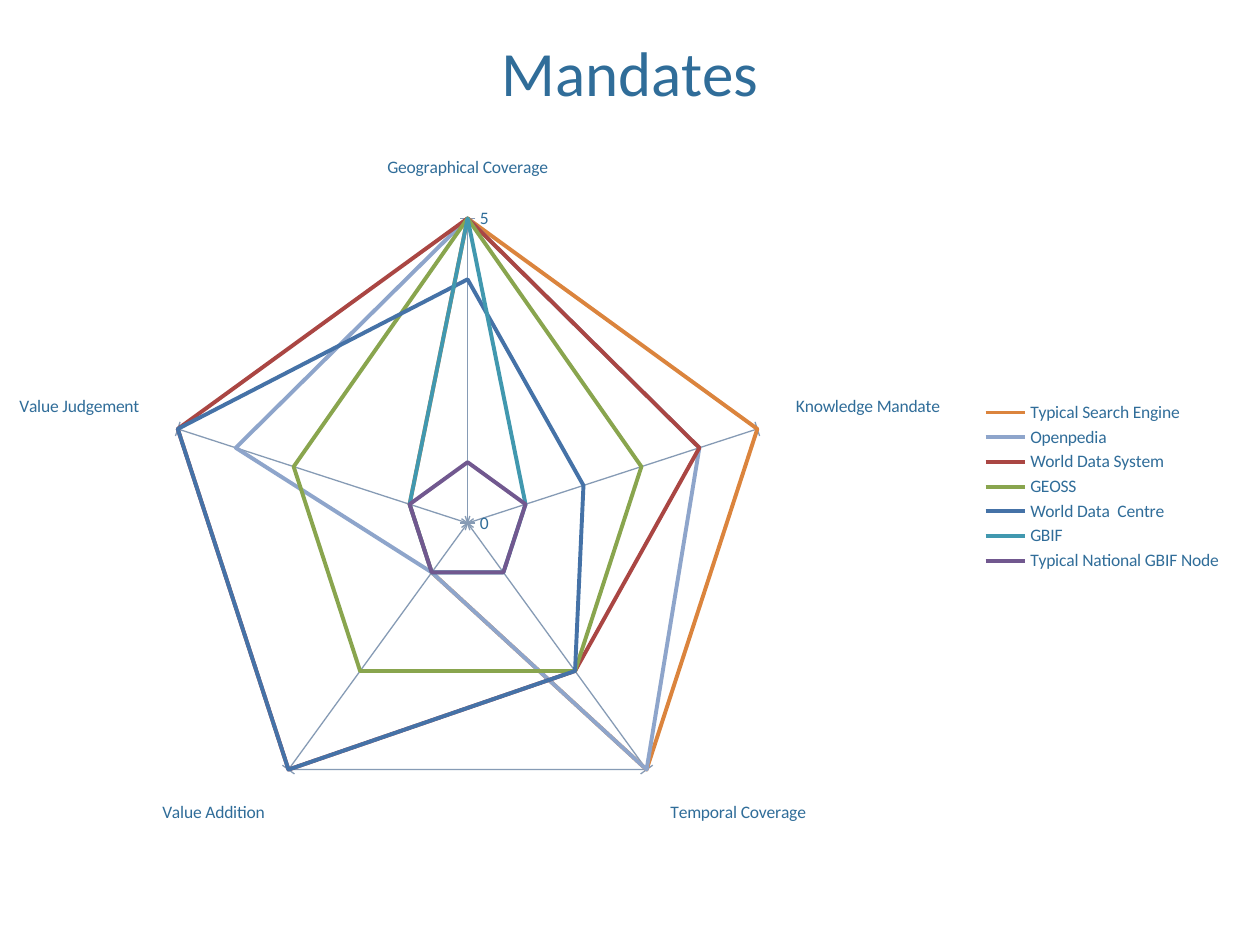
from dataclasses import dataclass

from lxml import etree
from pptx import Presentation
from pptx.chart.data import CategoryChartData
from pptx.dml.color import RGBColor
from pptx.enum import chart as ch, text
from pptx.oxml.ns import qn
from pptx.util import Inches, Pt

TEXT = RGBColor(0x30, 0x6D, 0x99)
GRID = RGBColor(0x86, 0x9B, 0xB5)
FONT = "Calibri"
CATEGORIES = ["Geographical Coverage", "Knowledge Mandate", "Temporal Coverage",
              "Value Addition", "Value Judgement"]


@dataclass
class Provider:
    name: str
    scores: tuple[int, ...]
    color: RGBColor


PROVIDERS = [
    Provider("Typical Search Engine", (5, 5, 5, 1, 1), RGBColor(0xDB, 0x84, 0x3D)),
    Provider("Openpedia", (5, 4, 5, 1, 4), RGBColor(0x8E, 0xA5, 0xCB)),
    Provider("World Data System", (5, 4, 3, 5, 5), RGBColor(0xAA, 0x46, 0x43)),
    Provider("GEOSS", (5, 3, 3, 3, 3), RGBColor(0x89, 0xA5, 0x4E)),
    Provider("World Data  Centre", (4, 2, 3, 5, 5), RGBColor(0x45, 0x72, 0xA7)),
    Provider("GBIF", (5, 1, 1, 1, 1), RGBColor(0x41, 0x98, 0xAF)),
    Provider("Typical National GBIF Node", (1, 1, 1, 1, 1), RGBColor(0x71, 0x58, 0x8F)),
]


@dataclass
class Box:
    """Left, top, width and height as shares of the enclosing area."""
    x: float
    y: float
    w: float
    h: float

    def on_slide(self, prs) -> tuple[int, ...]:
        width, height = prs.slide_width, prs.slide_height
        return (int(self.x * width), int(self.y * height),
                int(self.w * width), int(self.h * height))


TITLE_BOX = Box(0.05, 0.02, 0.9, 0.11)
CHART_BOX = Box(-0.01, 0.085, 0.99, 0.86)
PLOT_BOX = Box(0.14, 0.17, 0.49, 0.75)


def set_title(prs, slide, title: str) -> None:
    sp = slide.shapes.title
    sp.left, sp.top, sp.width, sp.height = TITLE_BOX.on_slide(prs)
    tf = sp.text_frame
    tf.vertical_anchor = text.MSO_ANCHOR.MIDDLE
    p = tf.paragraphs[0]
    p.alignment = text.PP_ALIGN.CENTER
    r = p.add_run()
    r.text = title
    r.font.name, r.font.size, r.font.color.rgb = FONT, Pt(36), TEXT


def place_plot(chart, box: Box) -> None:
    """Fix the inner plot area within the chart."""
    area = chart._chartSpace.find(".//" + qn("c:plotArea"))
    for old in area.findall(qn("c:layout")):
        area.remove(old)
    layout = etree.Element(qn("c:layout"))
    manual = etree.SubElement(layout, qn("c:manualLayout"))
    settings = {"layoutTarget": "inner", "xMode": "edge", "yMode": "edge",
                "x": box.x, "y": box.y, "w": box.w, "h": box.h}
    for tag, value in settings.items():
        etree.SubElement(manual, qn("c:" + tag)).set("val", str(value))
    area.insert(0, layout)


def add_radar(prs, slide, providers: list[Provider]) -> None:
    data = CategoryChartData(number_format="General")
    data.categories = CATEGORIES
    for provider in providers:
        data.add_series(provider.name, provider.scores)
    chart = slide.shapes.add_chart(
        ch.XL_CHART_TYPE.RADAR, *CHART_BOX.on_slide(prs), data).chart
    chart.has_title = False
    chart.font.name, chart.font.size, chart.font.color.rgb = FONT, Pt(10), TEXT
    place_plot(chart, PLOT_BOX)

    # Legend
    chart.has_legend = True
    chart.legend.position = ch.XL_LEGEND_POSITION.RIGHT
    chart.legend.include_in_layout = False

    # Axes
    value_axis = chart.value_axis
    value_axis.minimum_scale, value_axis.maximum_scale = 0, 5
    value_axis.major_unit = 5
    value_axis.major_tick_mark = ch.XL_TICK_MARK.CROSS
    chart.category_axis.major_tick_mark = ch.XL_TICK_MARK.OUTSIDE
    for axis in (value_axis, chart.category_axis):
        axis.has_major_gridlines = True
        for line in (axis.format.line, axis.major_gridlines.format.line):
            line.color.rgb, line.width = GRID, Pt(0.75)

    # Series
    plot = chart.plots[0]
    plot.vary_by_categories = False
    for series, provider in zip(plot.series, providers):
        series.marker.style = ch.XL_MARKER_STYLE.NONE
        series.format.line.color.rgb = provider.color
        series.format.line.width = Pt(2.25)


def main() -> None:
    prs = Presentation()
    prs.slide_width, prs.slide_height = Inches(10), Inches(7.5)
    slide = prs.slides.add_slide(prs.slide_layouts[5])
    set_title(prs, slide, "Mandates")
    add_radar(prs, slide, PROVIDERS)
    prs.save("out.pptx")


if __name__ == "__main__":
    main()
